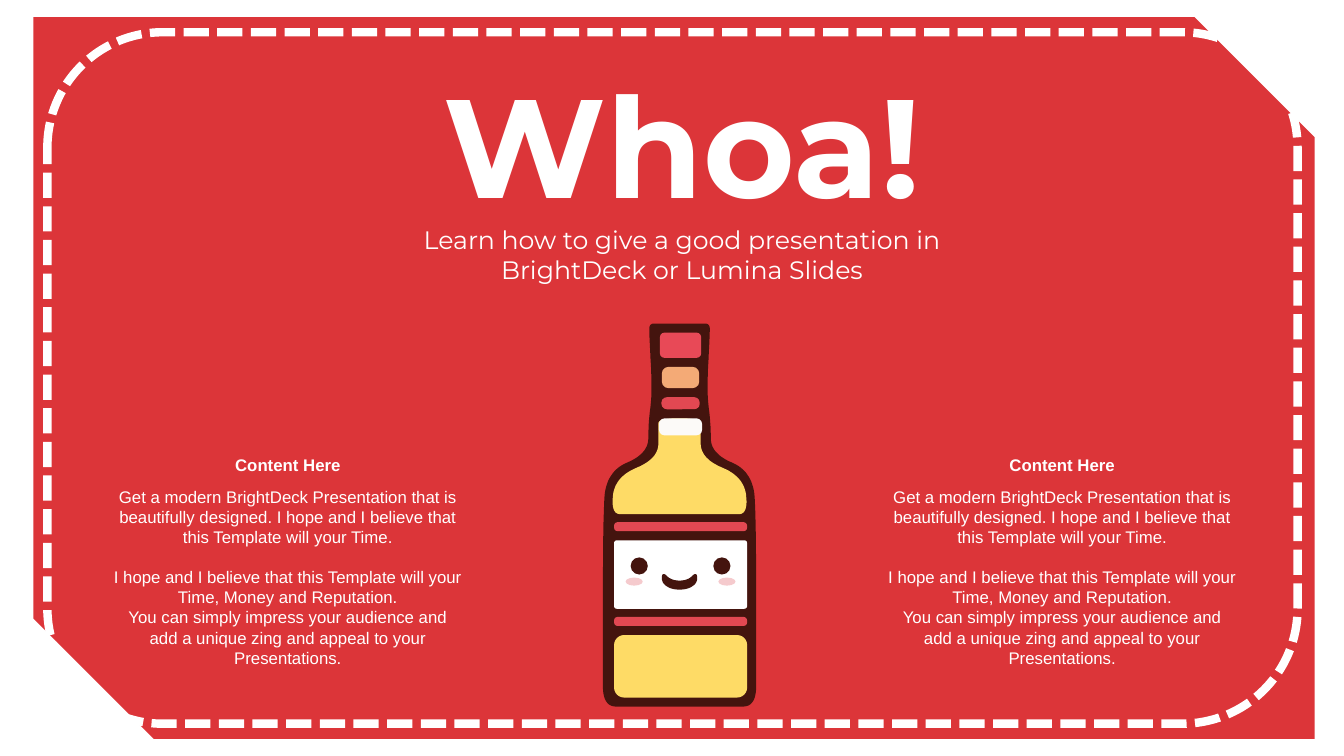
import pptx
import pptx.dml.color
import pptx.enum.dml
import pptx.enum.shapes
import pptx.enum.text
import pptx.util

Inches = pptx.util.Inches
RGBColor = pptx.dml.color.RGBColor
SHAPE = pptx.enum.shapes.MSO_SHAPE
ANCHOR = pptx.enum.text.MSO_ANCHOR

RED = RGBColor(0xDC, 0x35, 0x39)
WHITE = RGBColor(0xFF, 0xFF, 0xFF)
DARK = RGBColor(0x44, 0x14, 0x0E)
YELLOW = RGBColor(0xFE, 0xDB, 0x66)
STRIPE = RGBColor(0xE2, 0x48, 0x52)
CAP = RGBColor(0xE8, 0x49, 0x57)
FOIL = RGBColor(0xF4, 0xAA, 0x76)
COLLAR = RGBColor(0xFC, 0xFA, 0xF8)
CHEEK = RGBColor(0xF5, 0xCA, 0xCD)

BOTTLE_AXIS = 6.74
SMOOTHING_ROUNDS = 4
UNITS_PER_INCH = 1000

deck = pptx.Presentation()
deck.slide_width = Inches(13.33)
deck.slide_height = Inches(7.5)
page = deck.slides.add_slide(deck.slide_layouts[6])


def paint(shape, color):
    shape.shadow.inherit = False
    shape.fill.solid()
    shape.fill.fore_color.rgb = color
    shape.line.fill.background()


def add_text(left, top, width, height, paragraphs, size, font, bold=False, anchor=ANCHOR.MIDDLE, insets=(0.1, 0.1, 0.1, 0.1)):
    box = page.shapes.add_textbox(Inches(left), Inches(top), Inches(width), Inches(height))
    frame = box.text_frame
    frame.word_wrap = True
    frame.vertical_anchor = anchor
    frame.margin_left, frame.margin_top, frame.margin_right, frame.margin_bottom = map(Inches, insets)
    frame.text = "\n".join(paragraphs)
    for para in frame.paragraphs:
        para.alignment = pptx.enum.text.PP_ALIGN.CENTER
        para.font.size = pptx.util.Pt(size)
        para.font.name = font
        para.font.bold = bold
        para.font.color.rgb = WHITE
    return frame


card = page.shapes.add_shape(SHAPE.SNIP_2_DIAG_RECTANGLE, Inches(0.33), Inches(0.17), Inches(12.71), Inches(7.16))
paint(card, RED)

stitching = page.shapes.add_shape(SHAPE.ROUNDED_RECTANGLE, Inches(0.47), Inches(0.32), Inches(12.4), Inches(6.86))
stitching.shadow.inherit = False
stitching.fill.background()
stitching.line.color.rgb = WHITE
stitching.line.width = pptx.util.Pt(6)
stitching.line.dash_style = pptx.enum.dml.MSO_LINE.SQUARE_DOT

content = [
    "Get a modern BrightDeck Presentation that is beautifully designed. I hope and I believe that this Template will your Time.",
    "I hope and I believe that this Template will your Time, Money and Reputation.",
    "You can simply impress your audience and add a unique zing and appeal to your Presentations.",
]
column_insets = (0, 0.05, 0.1, 0.05)
for column_left in (8.8, 1.12):
    add_text(column_left, 4.46, 3.57, 0.3, ["Content Here"], 12, "Arial", bold=True, insets=column_insets)
    body = add_text(column_left, 4.78, 3.57, 1.92, content, 12, "Arial", anchor=ANCHOR.TOP, insets=column_insets)
    body.paragraphs[1].space_before = pptx.util.Pt(14)

add_text(3.31, 0.68, 6.91, 1.46, ["Whoa!"], 100, "Montserrat", bold=True)
add_text(3.45, 1.85, 6.63, 1.35, ["Learn how to give a good presentation in BrightDeck or Lumina Slides"], 18, "Montserrat")

glass_half = [
    (0.2, 3.21), (0.3, 3.21), (0.3, 3.32), (0.27, 3.9), (0.31, 4.2), (0.31, 4.5),
    (0.73, 4.68), (0.76, 5.2), (0.76, 6.6), (0.76, 7.01), (0.5, 7.01),
]
shoulder_half = [
    (0.21, 4.15), (0.21, 4.25), (0.21, 4.55), (0.64, 4.73), (0.68, 5.1), (0.5, 5.1),
]
mouth_half = [(0.08, 5.76), (0.17, 5.67), (0.18, 5.78), (0.08, 5.85)]

bottle = page.shapes.add_group_shape()
for half, color in ((glass_half, DARK), (shoulder_half, YELLOW), (mouth_half, DARK)):
    points = [(BOTTLE_AXIS + x, y) for x, y in half]
    points += [(BOTTLE_AXIS - x, y) for x, y in reversed(half)]
    for smoothing in range(SMOOTHING_ROUNDS):
        points = [
            (x1 + (x2 - x1) * share, y1 + (y2 - y1) * share)
            for (x1, y1), (x2, y2) in zip(points, points[1:] + points[:1])
            for share in (0.25, 0.75)
        ]
    outline = [(round(x * UNITS_PER_INCH), round(y * UNITS_PER_INCH)) for x, y in points]
    builder = bottle.shapes.build_freeform(*outline[0], scale=Inches(1) / UNITS_PER_INCH)
    builder.add_line_segments(outline[1:], close=True)
    paint(builder.convert_to_shape(), color)

    if half is shoulder_half:
        for block_color, top, width, height, rounding in [
            (CAP, 3.3, 0.41, 0.25, 0.18),
            (FOIL, 3.64, 0.37, 0.21, 0.3),
            (STRIPE, 3.94, 0.38, 0.12, 0.45),
            (COLLAR, 4.15, 0.43, 0.17, 0.35),
            (STRIPE, 5.18, 1.32, 0.09, 0.4),
            (WHITE, 5.36, 1.32, 0.68, 0.04),
            (STRIPE, 6.12, 1.32, 0.09, 0.4),
            (YELLOW, 6.3, 1.32, 0.62, 0.16),
        ]:
            block = bottle.shapes.add_shape(
                SHAPE.ROUNDED_RECTANGLE, Inches(BOTTLE_AXIS + 0.01 - width / 2), Inches(top), Inches(width), Inches(height))
            block.adjustments[0] = rounding
            paint(block, block_color)

for side in (-1, 1):
    for color, offset, top, width, height in ((DARK, 0.41, 5.53, 0.17, 0.17), (CHEEK, 0.46, 5.73, 0.17, 0.08)):
        left = BOTTLE_AXIS + 0.01 + side * offset - width / 2
        paint(bottle.shapes.add_shape(SHAPE.OVAL, Inches(left), Inches(top), Inches(width), Inches(height)), color)

deck.save("out.pptx")
